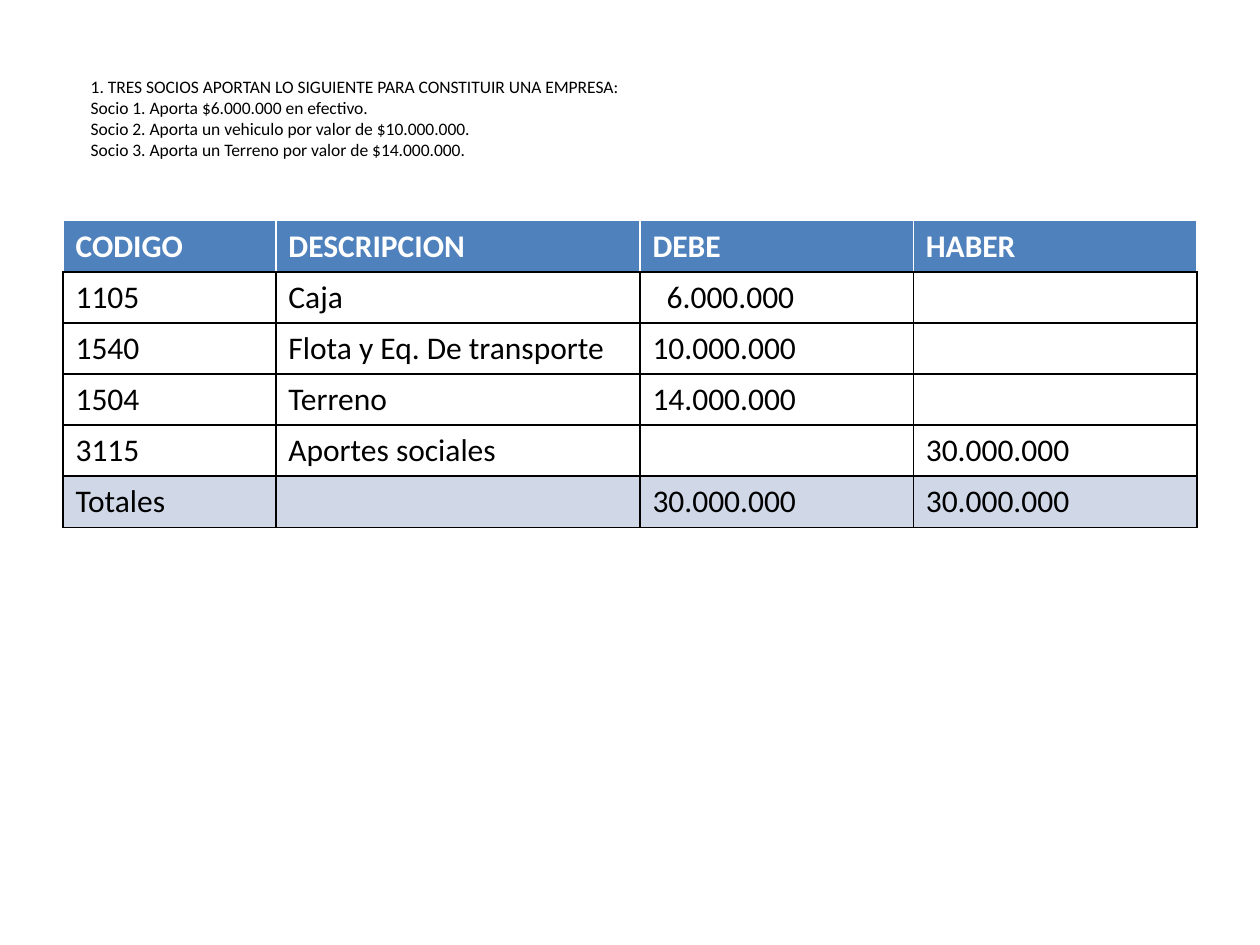
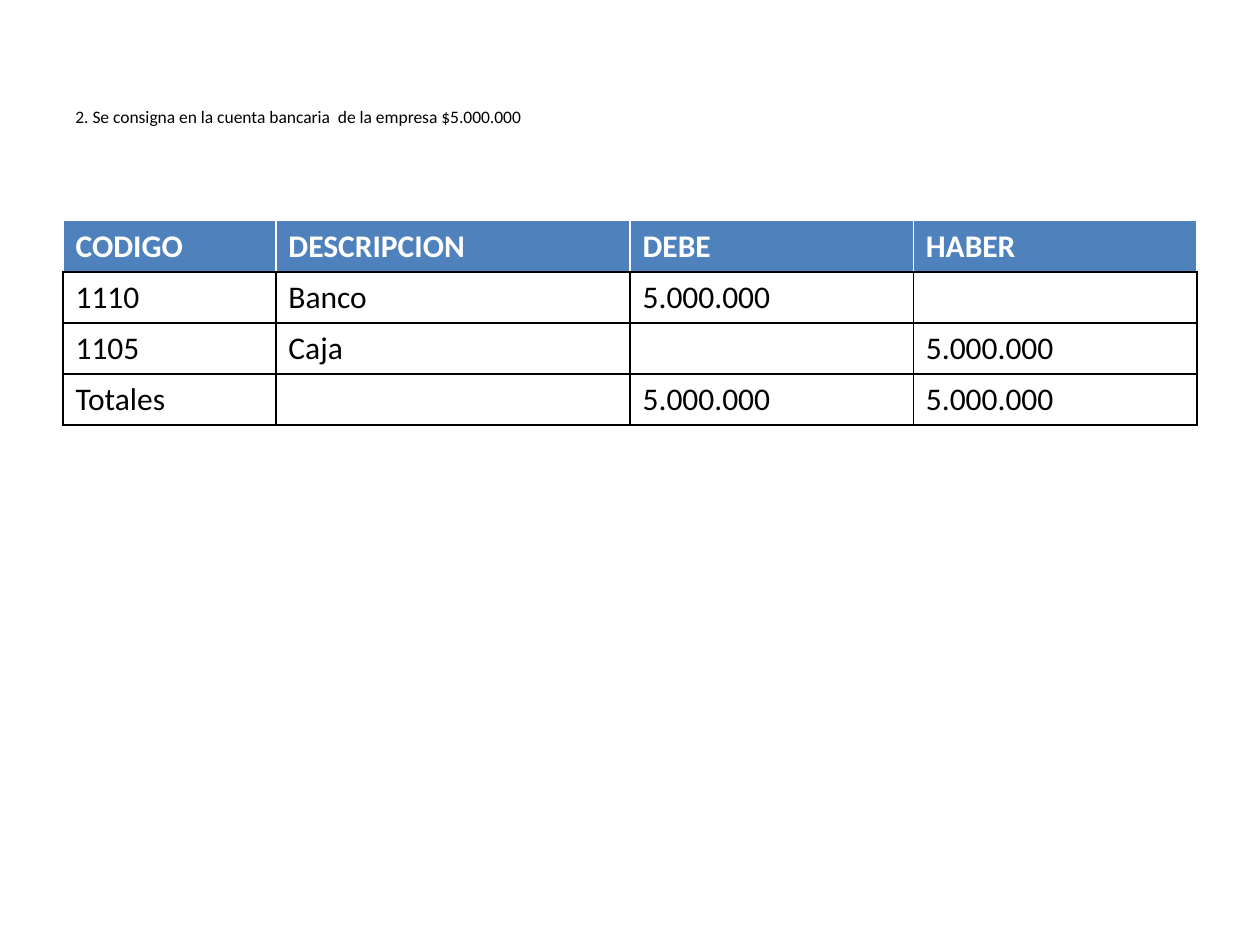
"""Build two slides of accounting entries, each a statement over a ledger table."""
from lxml.etree import SubElement as Sub
from pptx import Presentation
from pptx.dml.color import RGBColor as RGB
from pptx.enum.text import MSO_ANCHOR as Anchor, PP_ALIGN as Align
from pptx.oxml.ns import qn
from pptx.util import Cm, Pt

BLACK = RGB(0x00, 0x00, 0x00)
WHITE = RGB(0xFF, 0xFF, 0xFF)
BLUE = RGB(0x4F, 0x81, 0xBD)
PALE = RGB(0xD0, 0xD8, 0xE8)
FONT = "Calibri"
HEADS = ("CODIGO", "DESCRIPCION", "DEBE", "HABER")


class Deck:
    def __init__(self):
        self.prs = Presentation()
        self.prs.slide_width, self.prs.slide_height = Cm(25.4), Cm(19.05)
        self.slide = None

    def page(self):
        self.slide = self.prs.slides.add_slide(self.prs.slide_layouts[6])

    def label(self, para, text, size, color=BLACK, bold=False):
        para.text = text
        font = para.font
        font.name, font.size, font.bold = FONT, Pt(size), bold
        font.color.rgb = color

    def title(self, text, left, top, align=Align.LEFT):
        box = self.slide.shapes.add_textbox(Cm(left), Cm(top), Cm(22.86), Cm(3.18))
        frame = box.text_frame
        frame.word_wrap = True
        frame.vertical_anchor = Anchor.MIDDLE
        para = frame.paragraphs[0]
        para.alignment = align
        self.label(para, text, 10)

    def edge(self, cell, **colors):
        props = cell._tc.get_or_add_tcPr()
        for side in "LRTB":
            line = Sub(props, qn(f"a:ln{side}"), w=str(Pt(1)))
            fill = Sub(line, qn("a:solidFill"))
            Sub(fill, qn("a:srgbClr"), val=str(colors.get(side, BLACK)))

    def ledger(self, rows, widths, foot=None):
        rows = [HEADS, *rows]
        high = Cm(1.03)
        table = self.slide.shapes.add_table(
            len(rows), len(HEADS), Cm(1.27), Cm(4.45), Cm(sum(widths)), high * len(rows)
        ).table
        table.horz_banding = False
        for col, width in zip(table.columns, widths):
            col.width = Cm(width)
        for r, row in enumerate(rows):
            table.rows[r].height = high
            head = r == 0
            back = BLUE if head else foot if r == len(rows) - 1 else None
            for c, text in enumerate(row):
                cell = table.cell(r, c)
                self.edge(cell, **(dict.fromkeys("LRT", WHITE) if head else {}))
                if back:
                    cell.fill.solid()
                    cell.fill.fore_color.rgb = back
                else:
                    cell.fill.background()
                para = cell.text_frame.paragraphs[0]
                self.label(para, text, 18, WHITE if head else BLACK, head)
        return table


def main():
    deck = Deck()

    deck.page()
    deck.title(
        "1. TRES SOCIOS APORTAN LO SIGUIENTE PARA CONSTITUIR UNA EMPRESA:\n"
        "Socio 1. Aporta $6.000.000 en efectivo.\n"
        "Socio 2. Aporta un vehiculo por valor de $10.000.000.\n"
        "Socio 3. Aporta un Terreno por valor de $14.000.000.",
        1.58, 0.79,
    )
    table = deck.ledger(
        [
            ("1105", "Caja", "6.000.000", ""),
            ("1540", "Flota y Eq. De transporte", "10.000.000", ""),
            ("1504", "Terreno", "14.000.000", ""),
            ("3115", "Aportes sociales", "", "30.000.000"),
            ("Totales", "", "30.000.000", "30.000.000"),
        ],
        (4.29, 7.34, 5.51, 5.72),
        PALE,
    )
    table.cell(1, 2).margin_left = Cm(0.54)

    deck.page()
    deck.title(
        "2. Se consigna en la cuenta bancaria  de la empresa $5.000.000",
        1.27, 0.76, Align.JUSTIFY,
    )
    deck.ledger(
        [
            ("1110", "Banco", "5.000.000", ""),
            ("1105", "Caja", "", "5.000.000"),
            ("Totales", "", "5.000.000", "5.000.000"),
        ],
        (4.29, 7.14, 5.71, 5.72),
    )

    deck.prs.save("out.pptx")


if __name__ == "__main__":
    main()
